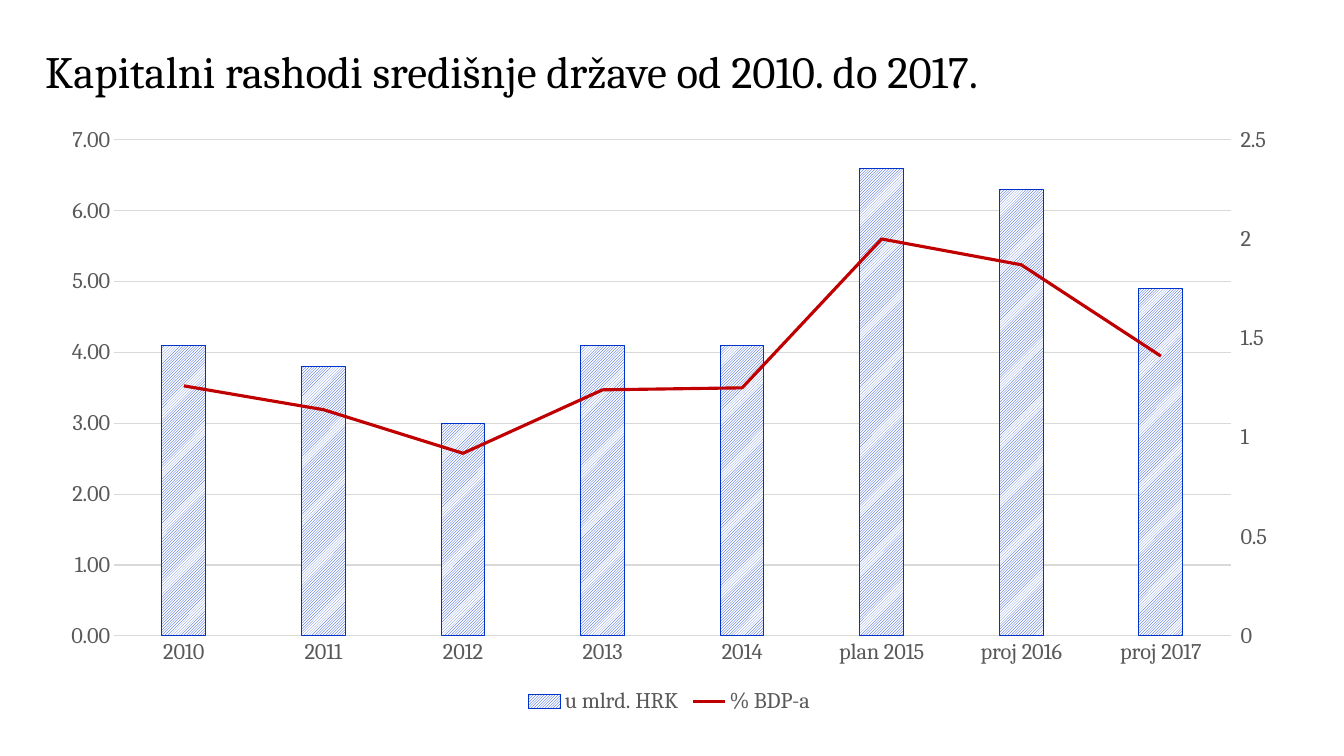
from dataclasses import dataclass

from lxml import etree
from pptx import Presentation
from pptx.chart.axis import ValueAxis
from pptx.chart.data import CategoryChartData
from pptx.dml.color import RGBColor
from pptx.enum.chart import XL_CHART_TYPE, XL_LEGEND_POSITION, XL_MARKER_STYLE, XL_TICK_MARK
from pptx.enum.dml import MSO_PATTERN
from pptx.enum.text import MSO_ANCHOR
from pptx.oxml import parse_xml
from pptx.oxml.ns import nsdecls, qn
from pptx.util import Cm, Pt

COLUMNS = XL_CHART_TYPE.COLUMN_CLUSTERED
BOTTOM = XL_LEGEND_POSITION.BOTTOM
NO_MARKER = XL_MARKER_STYLE.NONE
NO_TICK, OUTSIDE_TICK = XL_TICK_MARK.NONE, XL_TICK_MARK.OUTSIDE
HATCH = MSO_PATTERN.DARK_UPWARD_DIAGONAL
MIDDLE = MSO_ANCHOR.MIDDLE


@dataclass(frozen=True)
class Theme:
    font: str = "Cambria"
    title_size: Pt = Pt(32)
    chart_size: Pt = Pt(16)
    hairline: Pt = Pt(0.75)
    trend_width: Pt = Pt(2.25)
    black: RGBColor = RGBColor(0x00, 0x00, 0x00)
    white: RGBColor = RGBColor(0xFF, 0xFF, 0xFF)
    label: RGBColor = RGBColor(0x59, 0x59, 0x59)
    grid: RGBColor = RGBColor(0xD9, 0xD9, 0xD9)
    column: RGBColor = RGBColor(0x00, 0x33, 0xCC)
    trend: RGBColor = RGBColor(0xC0, 0x00, 0x00)


THEME = Theme()
TITLE = "Kapitalni rashodi središnje države od 2010. do 2017."
TITLE_BOX = (Cm(0.89), Cm(0.33), Cm(30.66), Cm(3.07))
CHART_BOX = (Cm(1.17), Cm(2.9), Cm(31.39), Cm(15.21))
YEARS = ("2010", "2011", "2012", "2013", "2014", "plan 2015", "proj 2016", "proj 2017")
SPENDING = (4.1, 3.8, 3, 4.1, 4.1, 6.6, 6.3, 4.9)
GDP_SHARE = (1.26, 1.14, 0.92, 1.24, 1.25, 2, 1.87, 1.41)

LINE_PLOT_XML = f"""<c:lineChart {nsdecls("c")}>
  <c:grouping val="standard"/><c:varyColors val="0"/>
  <c:marker val="1"/><c:axId val="5001"/><c:axId val="5002"/>
</c:lineChart>"""
RIGHT_AXIS_XML = f"""<c:valAx {nsdecls("c")}>
  <c:axId val="5002"/><c:scaling><c:orientation val="minMax"/></c:scaling>
  <c:delete val="0"/><c:axPos val="r"/>
  <c:numFmt formatCode="General" sourceLinked="0"/>
  <c:majorTickMark val="out"/><c:minorTickMark val="none"/><c:tickLblPos val="nextTo"/>
  <c:crossAx val="5001"/><c:crosses val="max"/><c:crossBetween val="between"/>
</c:valAx>"""
HIDDEN_AXIS_XML = f"""<c:catAx {nsdecls("c")}>
  <c:axId val="5001"/><c:scaling><c:orientation val="minMax"/></c:scaling>
  <c:delete val="1"/><c:axPos val="b"/>
  <c:majorTickMark val="none"/><c:minorTickMark val="none"/><c:tickLblPos val="nextTo"/>
  <c:crossAx val="5002"/><c:crosses val="autoZero"/>
</c:catAx>"""


def apply_format(target, values):
    for name, value in values.items():
        setattr(target, name, value)


def style_font(font, size, color):
    apply_format(font, {"name": THEME.font, "size": size})
    font.color.rgb = color


def style_line(line, color, width):
    line.color.rgb = color
    line.width = width


def style_axis(axis, major_tick, line_color=None):
    apply_format(axis, {"major_tick_mark": major_tick, "minor_tick_mark": NO_TICK})
    style_font(axis.tick_labels.font, THEME.chart_size, THEME.label)
    if line_color is None:
        axis.format.line.fill.background()
    else:
        style_line(axis.format.line, line_color, THEME.hairline)


def move_share_to_right_axis(chart, left_axis):
    """Turn the second column series into a line and return its value axis."""
    column_plot = chart.plots[0]
    series = column_plot.series[1]._element
    for element in series.findall(qn("c:invertIfNegative")):
        series.remove(element)
    line_plot = parse_xml(LINE_PLOT_XML)
    line_plot.insert(2, series)
    etree.SubElement(series, qn("c:smooth")).set("val", "0")
    column_plot._element.addnext(line_plot)
    right_axis = parse_xml(RIGHT_AXIS_XML)
    left_axis._element.addnext(right_axis)
    right_axis.addnext(parse_xml(HIDDEN_AXIS_XML))
    return ValueAxis(right_axis)


def add_title(slide, box):
    frame = slide.shapes.add_textbox(*box).text_frame
    apply_format(frame, {"word_wrap": True, "vertical_anchor": MIDDLE})
    paragraph = frame.paragraphs[0]
    paragraph.line_spacing = 0.9
    run = paragraph.add_run()
    run.text = TITLE
    style_font(run.font, THEME.title_size, THEME.black)


def add_spending_chart(slide, box):
    data = CategoryChartData()
    data.categories = YEARS
    data.add_series("u mlrd. HRK", SPENDING)
    data.add_series("% BDP-a", GDP_SHARE)
    chart = slide.shapes.add_chart(COLUMNS, *box, data).chart
    apply_format(chart, {"has_title": False, "has_legend": True})
    style_font(chart.font, THEME.chart_size, THEME.black)
    apply_format(chart.legend, {"position": BOTTOM, "include_in_layout": False})
    style_font(chart.legend.font, THEME.chart_size, THEME.label)

    left_axis = chart.value_axis
    right_axis = move_share_to_right_axis(chart, left_axis)
    style_axis(chart.category_axis, NO_TICK, THEME.grid)
    style_axis(left_axis, NO_TICK)
    style_axis(right_axis, OUTSIDE_TICK)
    style_line(left_axis.major_gridlines.format.line, THEME.grid, THEME.hairline)
    apply_format(left_axis.tick_labels,
                 {"number_format": "#,##0.00", "number_format_is_linked": False})

    column_plot, line_plot = chart.plots
    apply_format(column_plot, {"gap_width": 219, "vary_by_categories": False})
    columns = column_plot.series[0].format
    columns.fill.patterned()
    columns.fill.pattern = HATCH
    columns.fill.fore_color.rgb = THEME.column
    columns.fill.back_color.rgb = THEME.white
    style_line(columns.line, THEME.column, THEME.hairline)

    share = line_plot.series[0]
    share.smooth = False
    share.marker.style = NO_MARKER
    style_line(share.format.line, THEME.trend, THEME.trend_width)


def main():
    presentation = Presentation()
    apply_format(presentation, {"slide_width": Cm(33.87), "slide_height": Cm(19.05)})
    slide = presentation.slides.add_slide(presentation.slide_layouts[6])
    add_title(slide, TITLE_BOX)
    add_spending_chart(slide, CHART_BOX)
    presentation.save("out.pptx")


if __name__ == "__main__":
    main()
